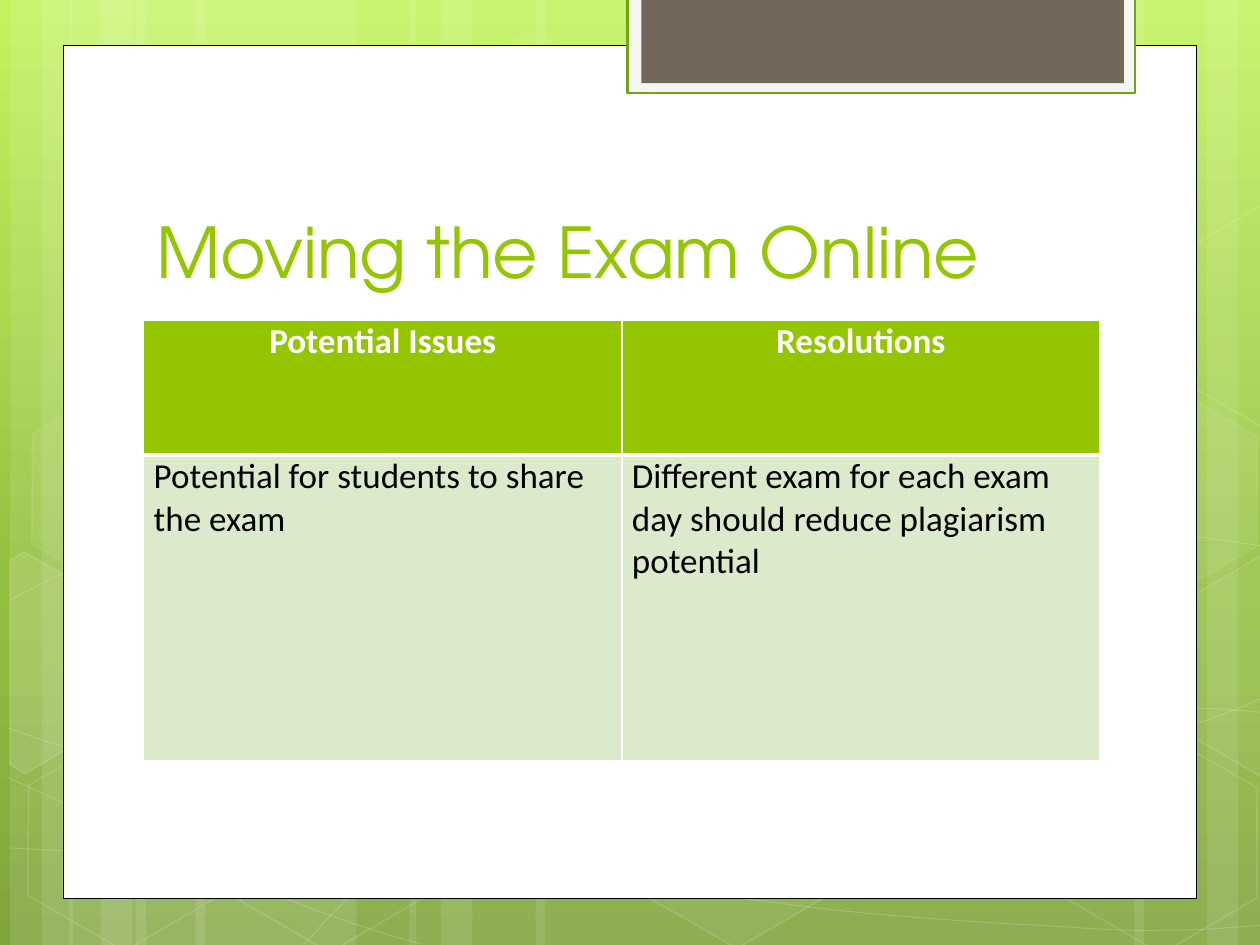
import copy
from lxml import etree
from pptx import Presentation
from pptx.dml.color import RGBColor
from pptx.enum import shapes, text
from pptx.oxml import ns
from pptx.util import Inches, Pt

WHITE = RGBColor(0xFF, 0xFF, 0xFF)
BLACK = RGBColor(0, 0, 0)
LIME = RGBColor(0x94, 0xC6, 0x00)
PALE_GREEN = RGBColor(0xDC, 0xEA, 0xCC)
OFF_WHITE = RGBColor(0xF5, 0xF5, 0xF5)
DARK_GREEN = RGBColor(0x74, 0xA5, 0x10)
BROWN = RGBColor(0x71, 0x68, 0x5A)
SKY = [(0, RGBColor(0xC3, 0xF3, 0x5F)), (0.62, RGBColor(0x93, 0xBF, 0x3F)),
       (1, RGBColor(0x81, 0xA5, 0x3E))]


def paint(fill, color, opacity=100):
    """Solid colour with an opacity in percent; opacity 0 means no fill."""
    if not opacity:
        fill.background()
        return
    fill.solid()
    fill.fore_color.rgb = color
    if opacity < 100:
        srgb = fill._xPr.find(ns.qn("a:solidFill"))[0]
        etree.SubElement(srgb, ns.qn("a:alpha"), val=str(opacity * 1000))


def style(shape, color, opacity=100, line_color=WHITE, line_opacity=0, width=1):
    shape.shadow.inherit = False
    paint(shape.fill, color, opacity)
    paint(shape.line.fill, line_color, line_opacity)
    if line_opacity:
        shape.line.width = Pt(width)


deck = Presentation()
deck.slide_width, deck.slide_height = Inches(10), Inches(7.5)
page = deck.slides.add_slide(deck.slide_layouts[5])

# Background gradient, top to bottom
backdrop = page.background.fill
backdrop.gradient()
backdrop.gradient_angle = 270
stop_list = backdrop._fill._gradFill.find(ns.qn("a:gsLst"))
stop_list.append(copy.deepcopy(stop_list[-1]))
for stop, (position, color) in zip(backdrop.gradient_stops, SKY):
    stop.position = position
    stop.color.rgb = color

# Translucent vertical stripes: left, width
stripes = [(1.08, 1.75), (0.08, 0.5), (0.33, 0.83), (1.55, 1.75), (0.55, 0.5), (0.8, 0.83),
           (7.33, 1.75), (9.58, 0.5), (9, 0.83), (4.25, 3.08), (3.25, 0.5), (3.5, 0.83)]
for left, width in stripes:
    stripe = page.shapes.add_shape(shapes.MSO_SHAPE.RECTANGLE, Inches(left), 0,
                                   Inches(width), deck.slide_height)
    style(stripe, WHITE, 10)

# Thin waves: a start point, then three Bezier points per curve
waves = [
    [(0.07, 6.73), (0.61, 6.76), (1.15, 6.79), (1.9, 6.78), (2.65, 6.77), (3.58, 6.75),
     (4.58, 6.65), (5.58, 6.55), (7, 6.36), (7.92, 6.17), (8.83, 5.98), (9.77, 5.68),
     (10.07, 5.51)],
    [(0.07, 4.77), (0.36, 4.61), (0.65, 4.46), (1.21, 4.31), (1.78, 4.16), (2.59, 3.94),
     (3.47, 3.87), (4.36, 3.8), (5.44, 3.79), (6.54, 3.87), (7.64, 3.95), (9.47, 4.26),
     (10.07, 4.34)],
    [(0.06, 6.17), (1.27, 6.72), (2.47, 7.27), (3.34, 7.49)],
    [(0.07, 5.78), (0.38, 5.89), (0.7, 6), (1.28, 6.16), (1.86, 6.31), (2.73, 6.56),
     (3.57, 6.73), (4.4, 6.9), (5.45, 7.08), (6.28, 7.18), (7.11, 7.29), (8, 7.33),
     (8.53, 7.36), (9.05, 7.4), (9.19, 7.38), (9.45, 7.38), (9.71, 7.37), (9.89, 7.35),
     (10.07, 7.34)],
    [(2.42, 7.49), (2.6, 7.29), (2.78, 7.09), (3.02, 6.91), (3.26, 6.73), (3.6, 6.53),
     (3.88, 6.39), (4.16, 6.25), (4.33, 6.19), (4.7, 6.09), (5.06, 5.99), (5.73, 5.85),
     (6.08, 5.78), (6.44, 5.71), (6.49, 5.71), (6.8, 5.69), (7.11, 5.66), (7.6, 5.63),
     (7.94, 5.62), (8.29, 5.61), (8.86, 5.62), (8.86, 5.62), (9.08, 5.62), (9.3, 5.62),
     (9.53, 5.62), (9.71, 5.63), (9.88, 5.64), (9.97, 5.65), (10.06, 5.66), (10.03, 5.65),
     (10.06, 5.66)],
]
for wave in waves:
    points = [(Inches(x), Inches(y)) for x, y in wave]
    builder = page.shapes.build_freeform(*points[0])
    builder.add_line_segments(points[1:], close=False)
    curve = builder.convert_to_shape()
    style(curve, WHITE, 0, WHITE, 20, 0.5)
    # Join every three straight segments into one Bezier curve
    outline = next(curve._element.iter(ns.qn("a:path")))
    segments = outline.findall(ns.qn("a:lnTo"))
    for first in range(0, len(segments), 3):
        bezier = etree.SubElement(outline, ns.qn("a:cubicBezTo"))
        for segment in segments[first:first + 3]:
            bezier.append(segment[0])
            outline.remove(segment)

# Hexagons: left, top, fill opacity, line opacity
hexagons = [(3.34, 0.36, 4, 8), (4.97, 5.89, 6, 12), (0.11, 5.91, 0, 12), (0.14, 3.12, 7, 8),
            (1.74, 5.92, 0, 12), (7.53, 4.53, 10, 12), (8.34, 5.93, 0, 12), (8.34, 3.14, 7, 8)]
for left, top, opacity, line_opacity in hexagons:
    hexagon = page.shapes.add_shape(shapes.MSO_SHAPE.HEXAGON, Inches(left), Inches(top),
                                    Inches(1.75), Inches(1.52))
    hexagon.rotation = 30
    hexagon.adjustments[0] = 0.285
    style(hexagon, WHITE, opacity, WHITE, line_opacity)

# Hexagons cut by the page edge: fill opacity, corners
cut_hexagons = [
    (10, [(0.08, 4.45), (0.19, 4.38), (0.96, 4.82), (0.95, 5.7), (0.2, 6.14), (0.08, 6.07)]),
    (4, [(9.26, 4.85), (10.01, 4.41), (10.09, 4.46), (10.09, 6.13), (10.02, 6.17), (9.26, 5.73)]),
    (0, [(9.26, 2.07), (10.01, 1.63), (10.1, 1.68), (10.09, 3.35), (10.02, 3.39), (9.26, 2.95)]),
]
for opacity, corners in cut_hexagons:
    points = [(Inches(x), Inches(y)) for x, y in corners]
    builder = page.shapes.build_freeform(*points[0])
    builder.add_line_segments(points[1:], close=True)
    style(builder.convert_to_shape(), WHITE, opacity, WHITE, 12)

# White sheet and the tab at its top
panels = [((0.5, 0.36, 9, 6.77), WHITE, BLACK, 100, 0.5),
          ((4.98, -0.02, 4.03, 0.76), OFF_WHITE, DARK_GREEN, 100, 1.25),
          ((5.09, -0.02, 3.83, 0.68), BROWN, BROWN, 0, 1)]
for frame, color, line_color, line_opacity, width in panels:
    panel = page.shapes.add_shape(shapes.MSO_SHAPE.RECTANGLE, *map(Inches, frame))
    style(panel, color, 100, line_color, line_opacity, width)

# Title, brought in front of the sheet
title = page.shapes.title
page.shapes._spTree.append(title._element)
title.left, title.top, title.width, title.height = map(Inches, (1.14, 1.12, 7.68, 1.25))
title.text_frame.vertical_anchor = text.MSO_ANCHOR.BOTTOM
para = title.text_frame.paragraphs[0]
para.alignment = text.PP_ALIGN.LEFT
span = para.add_run()
span.text = "Moving the Exam Online"
span.font.size = Pt(40)
span.font.name = "TeX Gyre Adventor"
span.font.color.rgb = LIME

# Issues and resolutions table
rows = [("Potential Issues", "Resolutions"),
        ("Potential for students to share the exam",
         "Different exam for each exam day should reduce plagiarism potential")]
table = page.shapes.add_table(2, 2, *map(Inches, (1.14, 2.54, 7.59, 3.5))).table
for row, height in zip(table.rows, (1.07, 2.43)):
    row.height = Inches(height)
for r, row in enumerate(rows):
    header = r == 0
    for c, wording in enumerate(row):
        cell = table.cell(r, c)
        paint(cell.fill, LIME if header else PALE_GREEN)
        cell.margin_left = cell.margin_right = Inches(0.08)
        cell.margin_top = cell.margin_bottom = 0
        para = cell.text_frame.paragraphs[0]
        para.alignment = text.PP_ALIGN.CENTER if header else text.PP_ALIGN.LEFT
        span = para.add_run()
        span.text = wording
        span.font.size = Pt(20)
        span.font.name = "Calibri"
        span.font.bold = header
        span.font.color.rgb = WHITE if header else BLACK
        # White borders, thick under the header
        properties = cell._tc.get_or_add_tcPr()
        for place, side in enumerate("LRTB"):
            weight = Pt(3 if header and side == "B" else 1)
            border = etree.Element(ns.qn("a:ln" + side), w=str(weight))
            solid = etree.SubElement(border, ns.qn("a:solidFill"))
            etree.SubElement(solid, ns.qn("a:srgbClr"), val=str(WHITE))
            properties.insert(place, border)

deck.save("out.pptx")
